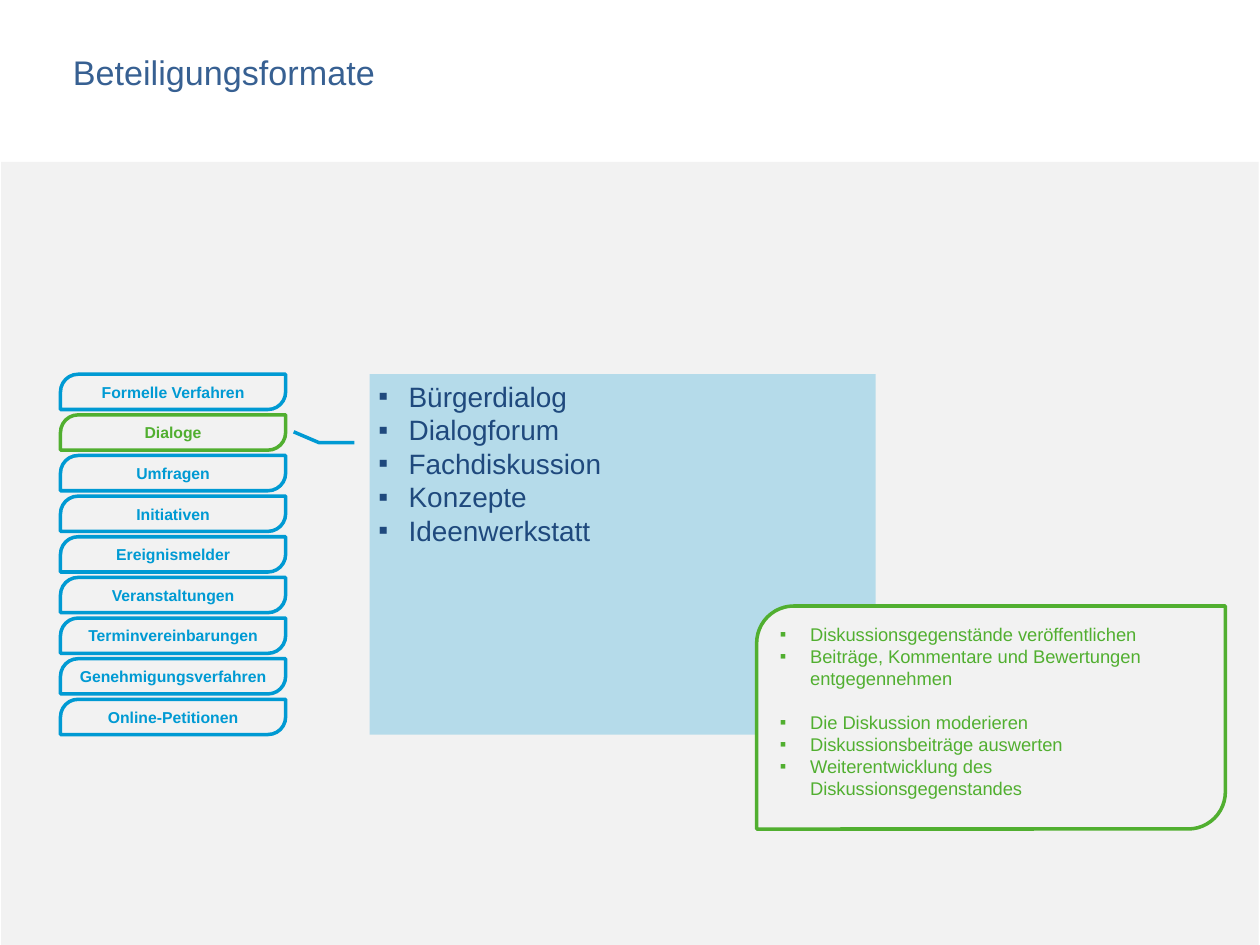
"""Build the slide on participation formats with a list of formats and two detail boxes."""
from lxml.etree import SubElement
from pptx import Presentation
from pptx.dml.color import RGBColor
from pptx.enum.shapes import MSO_SHAPE
from pptx.enum.text import MSO_ANCHOR, PP_ALIGN
from pptx.oxml.ns import qn
from pptx.util import Inches, Pt

COLORS = {
    "panel": "F2F2F2",
    "blue": "009AD3",
    "green": "51AF30",
    "title": "376092",
    "navy": "1F497D",
}

presentation = Presentation()
presentation.slide_width = Inches(10)
presentation.slide_height = Inches(7.5)
COLUMN = presentation.slide_width / 100
ROW = presentation.slide_height / 75
slide = presentation.slides.add_slide(presentation.slide_layouts[6])


def add_box(preset, left, top, width, height, fill, line=None):
    shape = slide.shapes.add_shape(
        preset, int(left * COLUMN), int(top * ROW), int(width * COLUMN), int(height * ROW)
    )
    shape.shadow.inherit = False
    shape.fill.solid()
    shape.fill.fore_color.rgb = RGBColor.from_string(COLORS[fill])
    if line:
        shape.line.color.rgb = RGBColor.from_string(COLORS[line])
        shape.line.width = Pt(2)
    else:
        shape.line.fill.background()
    shape.text_frame.word_wrap = True
    return shape


def add_text(paragraph, text, size, color, bold=False, bullet=False):
    if bullet:
        paragraph.alignment = PP_ALIGN.LEFT
        properties = paragraph._p.get_or_add_pPr()
        properties.set("marL", str(Inches(0.24)))
        properties.set("indent", str(-Inches(0.24)))
        SubElement(properties, qn("a:buFont"), typeface="Arial")
        SubElement(properties, qn("a:buChar"), char="▪")
    run = paragraph.add_run()
    run.text = text
    run.font.name = "Arial"
    run.font.size = Pt(size)
    run.font.bold = bold
    run.font.color.rgb = RGBColor.from_string(COLORS[color])


add_box(MSO_SHAPE.RECTANGLE, 0.1, 12.85, 99.8, 62.15, "panel")

examples_box = add_box(
    MSO_SHAPE.LINE_CALLOUT_2_NO_BORDER, 29.33, 29.7, 40.17, 28.6, "blue", "blue"
)
for index, value in enumerate([0.19, -0.03, 0.19, -0.1, 0.16, -0.15]):
    examples_box.adjustments[index] = value
fill_color = examples_box.fill._xPr.find(qn("a:solidFill"))[0]
SubElement(fill_color, qn("a:alpha"), val="25000")
examples_frame = examples_box.text_frame
examples_frame.margin_left = examples_frame.margin_right = Inches(0.07)
examples_frame.margin_top = examples_frame.margin_bottom = Inches(0.04)

tasks_box = add_box(
    MSO_SHAPE.ROUND_2_DIAG_RECTANGLE, 60.05, 48.1, 37.2, 17.7, "panel", "green"
)

bullet_lists = [
    (
        examples_frame, 16, "navy",
        ["Bürgerdialog", "Dialogforum", "Fachdiskussion", "Konzepte", "Ideenwerkstatt"],
    ),
    (
        tasks_box.text_frame, 10.5, "green",
        [
            "Diskussionsgegenstände veröffentlichen",
            "Beiträge, Kommentare und Bewertungen entgegennehmen",
            "Die Diskussion moderieren",
            "Diskussionsbeiträge auswerten",
            "Weiterentwicklung des Diskussionsgegenstandes",
        ],
    ),
]
for frame, size, color, items in bullet_lists:
    frame.vertical_anchor = MSO_ANCHOR.TOP
    for index, item in enumerate(items):
        paragraph = frame.add_paragraph() if index else frame.paragraphs[0]
        add_text(paragraph, item, size, color, bullet=True)
tasks_box.text_frame.paragraphs[1].space_after = Pt(12.5)

title = slide.shapes.add_textbox(
    int(4.8 * COLUMN), int(3.6 * ROW), int(52.3 * COLUMN), int(9.1 * ROW)
)
title.text_frame.word_wrap = True
title.text_frame.margin_top = Inches(0.05)
add_text(title.text_frame.paragraphs[0], "Beteiligungsformate", 19.5, "title")

formats = [
    "Formelle Verfahren",
    "Dialoge",
    "Umfragen",
    "Initiativen",
    "Ereignismelder",
    "Veranstaltungen",
    "Terminvereinbarungen",
    "Genehmigungsverfahren",
    "Online-Petitionen",
]
first_top, last_top = 29.7, 55.5
pitch = (last_top - first_top) / (len(formats) - 1)
for index, name in enumerate(formats):
    color = "green" if name == "Dialoge" else "blue"
    button = add_box(
        MSO_SHAPE.ROUND_2_DIAG_RECTANGLE,
        4.8, first_top + index * pitch, 17.87, 2.8, "panel", color,
    )
    button.adjustments[0] = 0.5
    frame = button.text_frame
    frame.margin_left = frame.margin_right = Inches(0.05)
    frame.margin_top = frame.margin_bottom = 0
    frame.vertical_anchor = MSO_ANCHOR.MIDDLE
    frame.paragraphs[0].alignment = PP_ALIGN.CENTER
    add_text(frame.paragraphs[0], name, 9, color, bold=True)

presentation.save("out.pptx")
